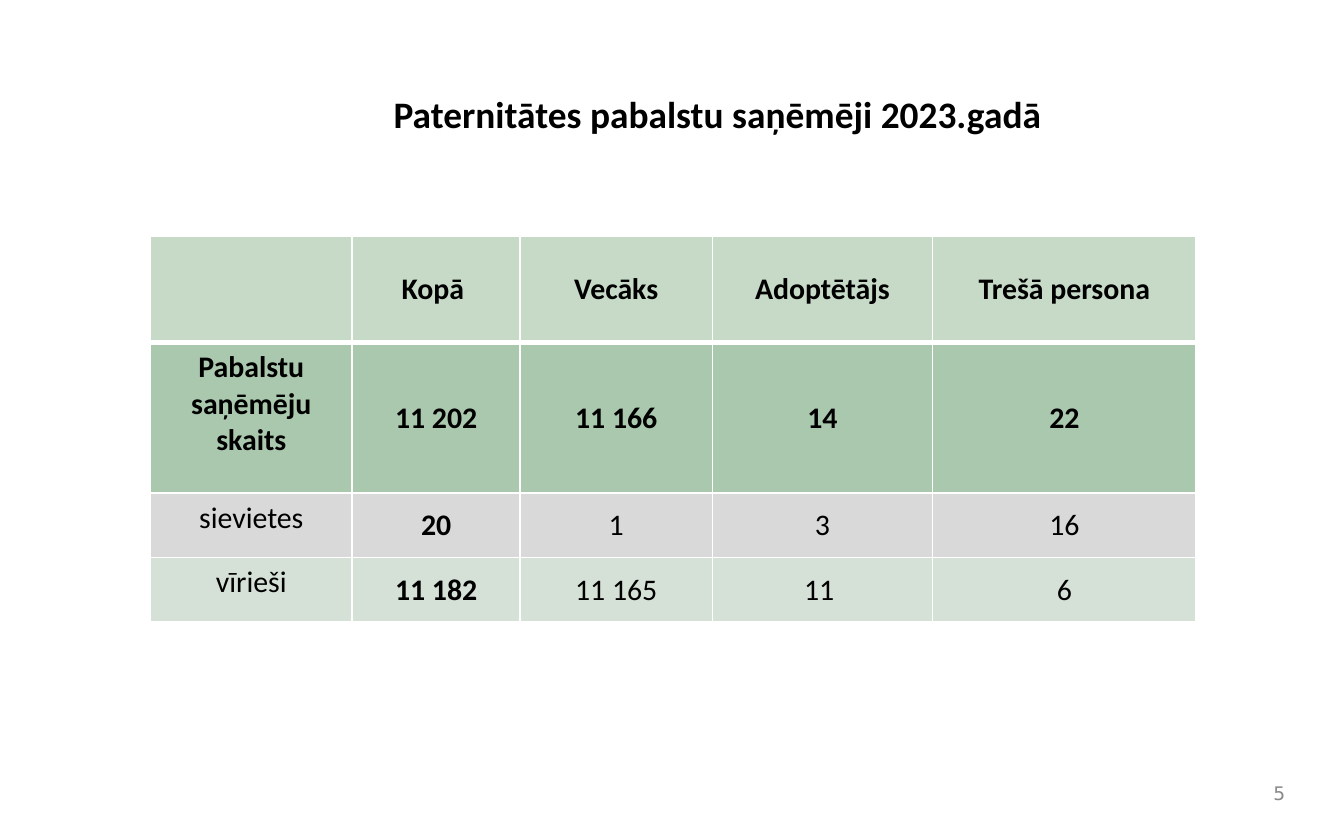
from pptx import Presentation
from pptx.dml.color import RGBColor
from pptx.enum.text import MSO_ANCHOR as Anchor, PP_ALIGN as Align
from pptx.oxml import parse_xml
from pptx.oxml.ns import nsdecls
from pptx.util import Inches, Pt

BLACK = RGBColor(0x00, 0x00, 0x00)
GREY = RGBColor(0x89, 0x89, 0x89)
WHITE = RGBColor(0xFF, 0xFF, 0xFF)
FILLS = [
    RGBColor(0xC7, 0xDA, 0xC8),
    RGBColor(0xAA, 0xC8, 0xAD),
    RGBColor(0xD9, 0xD9, 0xD9),
    RGBColor(0xD5, 0xE0, 0xD6),
]

TITLE = {"name": "Calibri", "size": Pt(20), "bold": True}
CELL = {"name": "Calibri", "size": Pt(16)}
NUMBER = {"name": "DejaVu Sans", "size": Pt(10)}

WIDTHS = [1.5, 1.25, 1.43, 1.64, 1.96]
HEIGHTS = [0.79, 1.12, 0.48, 0.48]
ROWS = [
    ["", "Kopā ", "Vecāks", "Adoptētājs", "Trešā persona"],
    ["Pabalstu saņēmēju skaits", "11 202", "11 166", "14", "22"],
    ["sievietes", "20", "1", "3", "16"],
    ["vīrieši", "11 182", "11 165", "11 ", "6"],
]


def write(frame, text, style, color=BLACK, align=Align.LEFT):
    par = frame.paragraphs[0]
    par.alignment = align
    run = par.add_run()
    run.text = text
    for key, value in style.items():
        setattr(run.font, key, value)
    run.font.color.rgb = color


def add_label(slide, box, text, style, anchor=Anchor.TOP, **look):
    frame = slide.shapes.add_textbox(*map(Inches, box)).text_frame
    frame.word_wrap = True
    frame.vertical_anchor = anchor
    write(frame, text, style, **look)


def set_edges(cell, row):
    """Draw white cell borders, thicker under the header row."""
    props = cell._tc.get_or_add_tcPr()
    thick = {(0, "B"), (1, "T")}
    for spot, side in enumerate("LRTB"):
        width = Pt(3 if (row, side) in thick else 1)
        line = parse_xml(
            f'<a:ln{side} {nsdecls("a")} w="{width}"><a:solidFill>'
            f'<a:srgbClr val="{WHITE}"/></a:solidFill></a:ln{side}>'
        )
        props.insert(spot, line)


def add_grid(slide, box):
    """Place the table, sharing the box among columns and rows."""
    left, top, width, height = box
    table = slide.shapes.add_table(
        len(ROWS), len(WIDTHS), *map(Inches, box)
    ).table
    for col, share in zip(table.columns, WIDTHS):
        col.width = Inches(width * share / sum(WIDTHS))
    for row, share in zip(table.rows, HEIGHTS):
        row.height = Inches(height * share / sum(HEIGHTS))
    for r, texts in enumerate(ROWS):
        for c, text in enumerate(texts):
            cell = table.cell(r, c)
            cell.fill.solid()
            cell.fill.fore_color.rgb = FILLS[r]
            cell.vertical_anchor = Anchor.MIDDLE if c else Anchor.TOP
            set_edges(cell, r)
            if text:
                style = {**CELL, "bold": r < 2 or c == 1}
                write(cell.text_frame, text, style, align=Align.CENTER)


def main():
    deck = Presentation()
    deck.slide_width, deck.slide_height = Inches(10), Inches(6.25)
    slide = deck.slides.add_slide(deck.slide_layouts[6])
    add_label(slide, (2.83, 0.63, 6.67, 0.77),
              "Paternitātes pabalstu saņēmēji 2023.gadā", TITLE)
    add_label(slide, (9.17, 5.76, 0.49, 0.28), "5", NUMBER,
              anchor=Anchor.MIDDLE, color=GREY, align=Align.RIGHT)
    add_grid(slide, (1.12, 1.76, 7.78, 2.87))
    deck.save("out.pptx")


if __name__ == "__main__":
    main()
